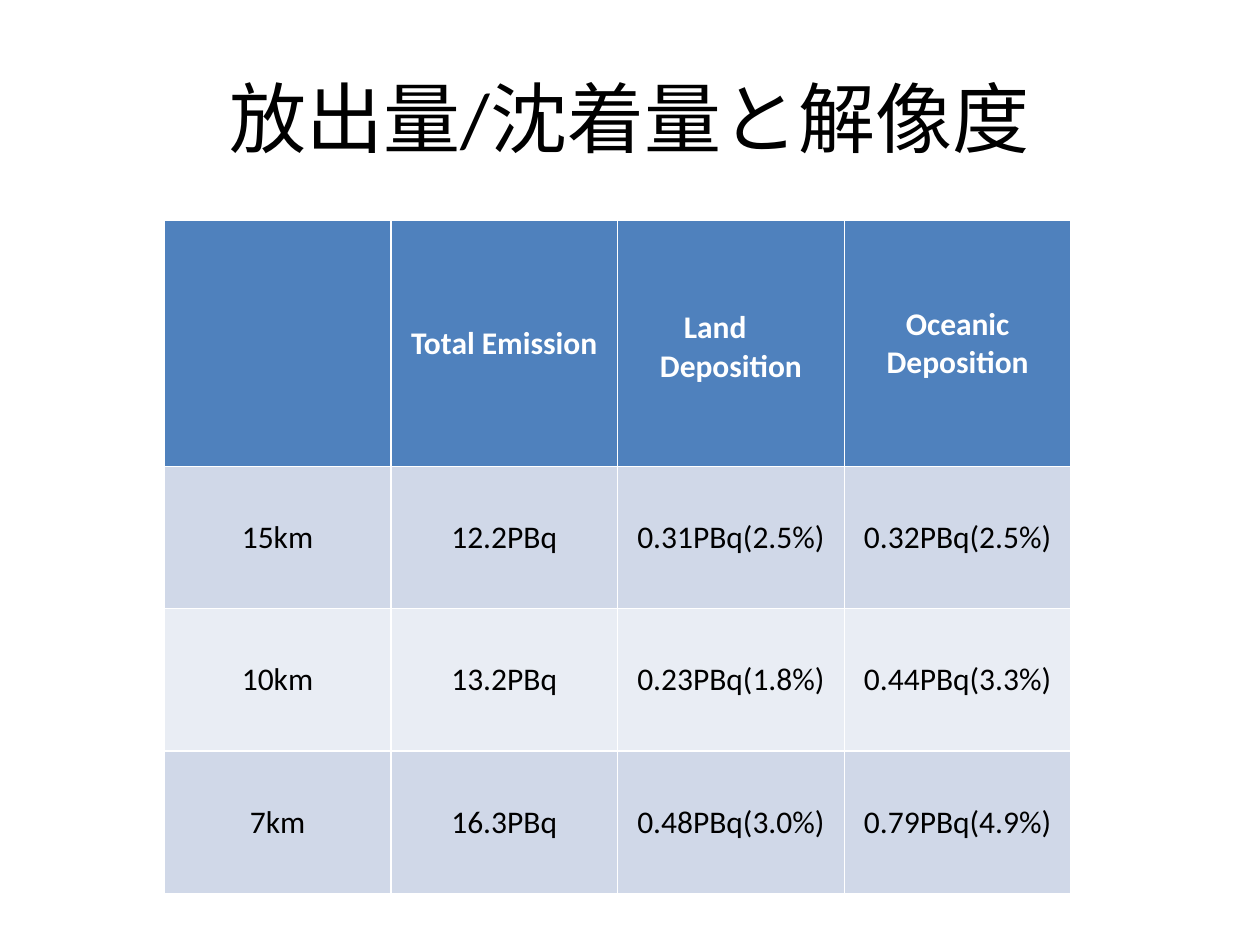
"""Build a slide with a table of emission and deposition by model resolution."""
from dataclasses import dataclass

from pptx import Presentation
from pptx.dml.color import RGBColor
from pptx.enum.text import MSO_ANCHOR, PP_ALIGN
from pptx.util import Cm, Pt

BLACK = RGBColor(0x00, 0x00, 0x00)
WHITE = RGBColor(0xFF, 0xFF, 0xFF)
BLUE = RGBColor(0x4F, 0x81, 0xBD)
BAND_DARK = RGBColor(0xD0, 0xD8, 0xE8)
BAND_LIGHT = RGBColor(0xE9, 0xED, 0xF4)
FONT = "Calibri"


@dataclass(frozen=True)
class RowStyle:
    """Look of one table row."""

    height: float
    fill: RGBColor
    color: RGBColor
    bold: bool


HEADER = RowStyle(4.95, BLUE, WHITE, True)
DARK = RowStyle(2.87, BAND_DARK, BLACK, False)
LIGHT = RowStyle(2.87, BAND_LIGHT, BLACK, False)

ROWS = [
    (HEADER, ("", "Total Emission", "Land　Deposition", "Oceanic Deposition")),
    (DARK, ("15km", "12.2PBq", "0.31PBq(2.5%)", "0.32PBq(2.5%)")),
    (LIGHT, ("10km", "13.2PBq", "0.23PBq(1.8%)", "0.44PBq(3.3%)")),
    (DARK, ("7km", "16.3PBq", "0.48PBq(3.0%)", "0.79PBq(4.9%)")),
]


def format_text(tf, size: float, color: RGBColor, bold: bool) -> None:
    """Centre the text and set its font."""
    tf.vertical_anchor = MSO_ANCHOR.MIDDLE
    for p in tf.paragraphs:
        p.alignment = PP_ALIGN.CENTER
        for r in p.runs:
            r.font.name = FONT
            r.font.size = Pt(size)
            r.font.bold = bold
            r.font.color.rgb = color


def add_title(s, text: str) -> None:
    """Fill and place the title placeholder."""
    sp = s.shapes.title
    sp.left, sp.top, sp.width, sp.height = Cm(1.27), Cm(0.76), Cm(22.86), Cm(3.18)
    sp.text_frame.text = text
    format_text(sp.text_frame, 44, BLACK, False)


def add_emission_table(s) -> None:
    """Add the table of emission and deposition."""
    height = sum(style.height for style, _ in ROWS)
    columns = len(ROWS[0][1])
    table = s.shapes.add_table(
        len(ROWS), columns, Cm(3.31), Cm(4.45), Cm(18.28), Cm(height)
    ).table
    for row, (style, texts) in zip(table.rows, ROWS):
        row.height = Cm(style.height)
        for cell, text in zip(row.cells, texts):
            cell.fill.solid()
            cell.fill.fore_color.rgb = style.fill
            cell.vertical_anchor = MSO_ANCHOR.MIDDLE
            cell.text_frame.text = text
            format_text(cell.text_frame, 18, style.color, style.bold)


def main() -> None:
    """Create and save the presentation."""
    prs = Presentation()
    prs.slide_width, prs.slide_height = Cm(25.4), Cm(19.05)
    s = prs.slides.add_slide(prs.slide_layouts[5])
    add_title(s, "放出量/沈着量と解像度")
    add_emission_table(s)
    prs.save("out.pptx")


if __name__ == "__main__":
    main()
